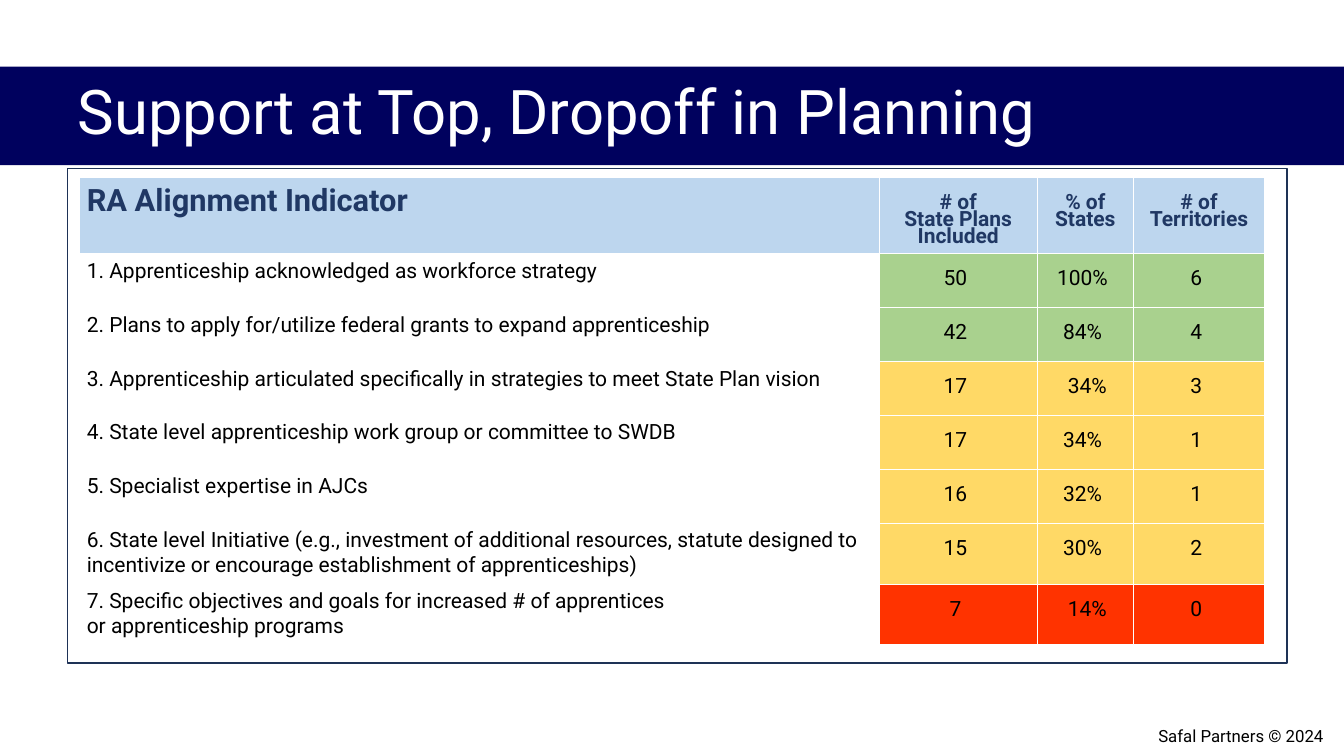
from dataclasses import dataclass

from lxml import etree
from pptx import Presentation
from pptx.dml.color import RGBColor
from pptx.enum.shapes import MSO_SHAPE
from pptx.enum.text import MSO_ANCHOR, MSO_AUTO_SIZE, PP_ALIGN
from pptx.oxml.ns import qn
from pptx.util import Pt

RECTANGLE = MSO_SHAPE.RECTANGLE
MIDDLE, TOP = MSO_ANCHOR.MIDDLE, MSO_ANCHOR.TOP
LEFT, CENTER, RIGHT = PP_ALIGN.LEFT, PP_ALIGN.CENTER, PP_ALIGN.RIGHT
NO_AUTOFIT = MSO_AUTO_SIZE.NONE
TITLE_ONLY = 5


@dataclass(frozen=True)
class Theme:
    font: str = "Roboto"
    banner: str = "00015E"
    frame: str = "1E3256"
    white: str = "FFFFFF"
    black: str = "000000"
    heading: str = "203864"
    header_fill: str = "BDD6EE"
    high: str = "A9D18E"
    medium: str = "FFD966"
    low: str = "FF3300"
    title_size: float = 44
    heading_size: float = 22
    table_size: float = 15
    footer_size: float = 12


@dataclass(frozen=True)
class Box:
    left: float
    top: float
    width: float
    height: float

    def lengths(self) -> tuple:
        return Pt(self.left), Pt(self.top), Pt(self.width), Pt(self.height)


@dataclass(frozen=True)
class Margins:
    left: float = 5
    top: float = 3.6
    right: float = 5
    bottom: float = 0


@dataclass(frozen=True)
class TextStyle:
    size: float
    color: str
    bold: bool = False
    align: PP_ALIGN = LEFT
    line_spacing: object = None


@dataclass(frozen=True)
class Indicator:
    label: str
    plans: str
    percent: str
    territories: str
    color: str
    height: float = 38.5
    percent_indent: float = 0


THEME = Theme()
BANNER = Box(0, 47.5, 960, 70.5)
TITLE = Box(48.2, 29.5, 903.6, 104.4)
FRAME = Box(48.2, 120.2, 871.2, 353.5)
FOOTER = Box(691.2, 511.2, 261.4, 28.8)
TABLE_LEFT, TABLE_TOP = 57, 127
COLUMN_WIDTHS = (571, 113, 68.5, 94)
HEADER_HEIGHT = 54.3

TITLE_STYLE = TextStyle(THEME.title_size, THEME.white, line_spacing=0.9)
FOOTER_STYLE = TextStyle(THEME.footer_size, THEME.black, align=RIGHT)
HEADING_STYLE = TextStyle(THEME.heading_size, THEME.heading, bold=True)
COLUMN_STYLE = TextStyle(THEME.table_size, THEME.heading, True, CENTER, Pt(12))
LABEL_STYLE = TextStyle(THEME.table_size, THEME.black)
VALUE_STYLE = TextStyle(THEME.table_size, THEME.black, False, CENTER, Pt(12))

LABEL_MARGINS = Margins()
COLUMN_MARGINS = Margins(top=14.5)
VALUE_RIGHT = 9

COLUMN_HEADINGS = ("# of\nState Plans Included", "% of States", "# of Territories")
INDICATORS = (
    Indicator("1. Apprenticeship acknowledged as workforce strategy",
              "50", "100%", "6", THEME.high),
    Indicator("2. Plans to apply for/utilize federal grants to expand apprenticeship",
              "42", "84%", "4", THEME.high),
    Indicator("3. Apprenticeship articulated specifically in strategies to meet State Plan vision",
              "17", "34%", "3", THEME.medium, percent_indent=7),
    Indicator("4. State level apprenticeship work group or committee to SWDB",
              "17", "34%", "1", THEME.medium),
    Indicator("5. Specialist expertise in AJCs", "16", "32%", "1", THEME.medium),
    Indicator("6. State level Initiative (e.g., investment of additional resources, statute "
              "designed to incentivize or encourage establishment of apprenticeships)",
              "15", "30%", "2", THEME.medium, height=43.6),
    Indicator("7. Specific objectives and goals for increased # of apprentices\n"
              "or apprenticeship programs",
              "7", "14%", "0", THEME.low, height=42.9, percent_indent=7),
)


def rgb(color: str) -> RGBColor:
    return RGBColor.from_string(color)


def write(text_frame, text: str, style: TextStyle) -> None:
    """Fill the first paragraph, with a line break at each newline."""
    text_frame.word_wrap = True
    paragraph = text_frame.paragraphs[0]
    paragraph.alignment = style.align
    if style.line_spacing is not None:
        paragraph.line_spacing = style.line_spacing
    for index, line in enumerate(text.split("\n")):
        if index:
            paragraph.add_line_break()
        run = paragraph.add_run()
        run.text = line
        run.font.name = THEME.font
        run.font.size = Pt(style.size)
        run.font.bold = style.bold
        run.font.color.rgb = rgb(style.color)


def add_rectangle(slide, box: Box, fill: str = "", line: str = ""):
    shape = slide.shapes.add_shape(RECTANGLE, *box.lengths())
    shape.shadow.inherit = False
    if fill:
        shape.fill.solid()
        shape.fill.fore_color.rgb = rgb(fill)
    else:
        shape.fill.background()
    if line:
        shape.line.color.rgb = rgb(line)
        shape.line.width = Pt(1)
    else:
        shape.line.fill.background()
    return shape


def add_title(slide) -> None:
    title = slide.shapes.title
    title.left, title.top, title.width, title.height = TITLE.lengths()
    title.text_frame.auto_size = NO_AUTOFIT
    title.text_frame.vertical_anchor = MIDDLE
    write(title.text_frame, "Support at Top, Dropoff in Planning", TITLE_STYLE)
    banner = add_rectangle(slide, BANNER, fill=THEME.banner)
    title.element.addprevious(banner.element)


def add_borders(cell) -> None:
    properties = cell._tc.get_or_add_tcPr()
    for index, side in enumerate(("a:lnL", "a:lnR", "a:lnT", "a:lnB")):
        border = etree.Element(qn(side), w=str(Pt(0.75)))
        fill = etree.SubElement(border, qn("a:solidFill"))
        etree.SubElement(fill, qn("a:srgbClr"), val=THEME.white)
        properties.insert(index, border)


def fill_cell(cell, text: str, style: TextStyle, margins: Margins, fill: str = "") -> None:
    cell.margin_left, cell.margin_top = Pt(margins.left), Pt(margins.top)
    cell.margin_right, cell.margin_bottom = Pt(margins.right), Pt(margins.bottom)
    cell.vertical_anchor = TOP
    if fill:
        cell.fill.solid()
        cell.fill.fore_color.rgb = rgb(fill)
    else:
        cell.fill.background()
    add_borders(cell)
    write(cell.text_frame, text, style)


def add_indicator_table(slide) -> None:
    heights = [HEADER_HEIGHT] + [indicator.height for indicator in INDICATORS]
    box = Box(TABLE_LEFT, TABLE_TOP, sum(COLUMN_WIDTHS), sum(heights))
    table = slide.shapes.add_table(len(heights), len(COLUMN_WIDTHS), *box.lengths()).table
    table.first_row = table.horz_banding = False
    for column, width in zip(table.columns, COLUMN_WIDTHS):
        column.width = Pt(width)
    for row, height in zip(table.rows, heights):
        row.height = Pt(height)

    fill_cell(table.cell(0, 0), "RA Alignment Indicator", HEADING_STYLE,
              LABEL_MARGINS, THEME.header_fill)
    for column, heading in enumerate(COLUMN_HEADINGS, 1):
        fill_cell(table.cell(0, column), heading, COLUMN_STYLE,
                  COLUMN_MARGINS, THEME.header_fill)
    for row, indicator in enumerate(INDICATORS, 1):
        fill_cell(table.cell(row, 0), indicator.label, LABEL_STYLE, LABEL_MARGINS)
        values = ((indicator.plans, 0), (indicator.percent, indicator.percent_indent),
                  (indicator.territories, 0))
        for column, (value, indent) in enumerate(values, 1):
            margins = Margins(left=5 + indent, top=14.5, right=VALUE_RIGHT)
            fill_cell(table.cell(row, column), value, VALUE_STYLE, margins, indicator.color)


def add_footer(slide) -> None:
    footer = slide.shapes.add_textbox(*FOOTER.lengths())
    footer.text_frame.vertical_anchor = MIDDLE
    write(footer.text_frame, "Safal Partners © 2024", FOOTER_STYLE)


def main() -> None:
    presentation = Presentation()
    presentation.slide_width, presentation.slide_height = Pt(960), Pt(540)
    slide = presentation.slides.add_slide(presentation.slide_layouts[TITLE_ONLY])
    add_title(slide)
    add_rectangle(slide, FRAME, line=THEME.frame)
    add_indicator_table(slide)
    add_footer(slide)
    presentation.save("out.pptx")


if __name__ == "__main__":
    main()
